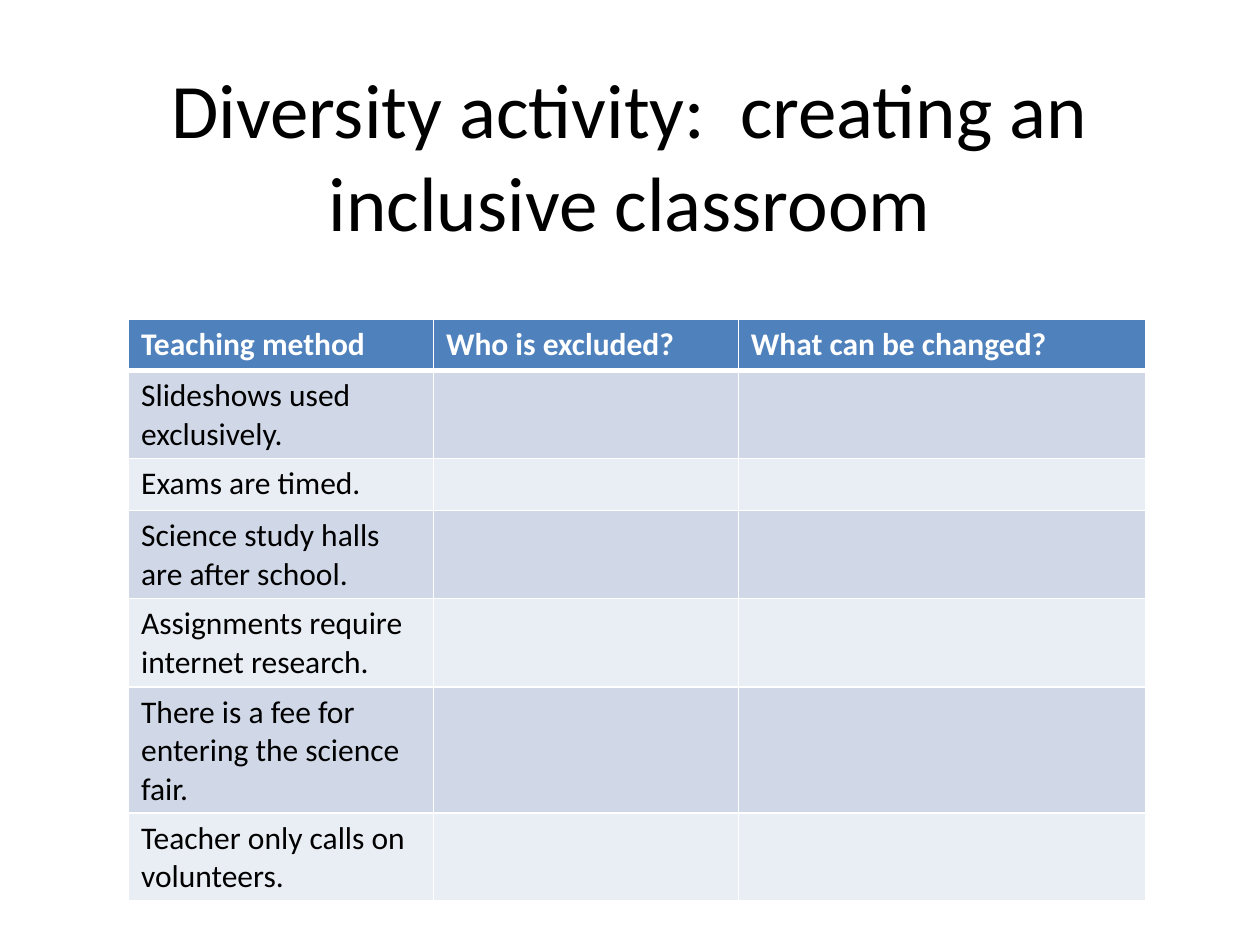
import pptx
import pptx.dml.color
import pptx.enum.text
import pptx.oxml.ns
import pptx.util
from lxml import etree
from pptx.util import Inches

TITLE = "Diversity activity:  creating an inclusive classroom"
HEADINGS = ["Teaching method", "Who is excluded?", "What can be changed?"]
METHODS = [
    "Slideshows used exclusively.",
    "Exams are timed.",
    "Science study halls are after school.",
    "Assignments require internet research.",
    "There is a fee for entering the science fair.",
    "Teacher only calls on volunteers.",
]
COLORS = {
    "text": "000000",
    "white": "FFFFFF",
    "header": "4F81BD",
    "odd": "D0D8E8",
    "even": "E9EDF4",
}
FONT = "Calibri"
COLUMN_WIDTHS = [2.42, 2.42, 3.23]
ROW_HEIGHT = 0.41


def rgb(name):
    return pptx.dml.color.RGBColor.from_string(COLORS[name])


def style_text(para, size, color, bold=False):
    for span in para.runs:
        span.font.name = FONT
        span.font.size = pptx.util.Pt(size)
        span.font.bold = bold
        span.font.color.rgb = rgb(color)


def add_borders(cell, widths):
    """Draw white cell borders; widths are points keyed by side."""
    properties = cell._tc.get_or_add_tcPr()
    for side, width in widths.items():
        line = etree.SubElement(properties, pptx.oxml.ns.qn(f"a:ln{side}"),
                                w=str(pptx.util.Pt(width)))
        fill = etree.SubElement(line, pptx.oxml.ns.qn("a:solidFill"))
        etree.SubElement(fill, pptx.oxml.ns.qn("a:srgbClr"), val=COLORS["white"])


def add_title(page):
    box = page.shapes.add_textbox(Inches(0.75), Inches(0.42), Inches(8.5), Inches(1.61))
    frame = box.text_frame
    frame.word_wrap = True
    frame.vertical_anchor = pptx.enum.text.MSO_ANCHOR.MIDDLE
    frame.text = TITLE
    para = frame.paragraphs[0]
    para.alignment = pptx.enum.text.PP_ALIGN.CENTER
    style_text(para, 44, "text")


def add_activity_table(page):
    rows = [HEADINGS] + [[method, "", ""] for method in METHODS]
    table = page.shapes.add_table(
        len(rows), len(HEADINGS), Inches(1.02), Inches(2.53),
        Inches(sum(COLUMN_WIDTHS)), Inches(ROW_HEIGHT * len(rows))).table
    for column, width in zip(table.columns, COLUMN_WIDTHS):
        column.width = Inches(width)

    for r, texts in enumerate(rows):
        table.rows[r].height = Inches(ROW_HEIGHT)
        is_header = r == 0
        fill = "header" if is_header else ("odd" if r % 2 else "even")
        for c, text in enumerate(texts):
            cell = table.cell(r, c)
            # The rule under the header row is heavier
            add_borders(cell, {"L": 1, "R": 1, "T": 3 if r == 1 else 1,
                               "B": 3 if is_header else 1})
            cell.fill.solid()
            cell.fill.fore_color.rgb = rgb(fill)
            if text:
                cell.text_frame.text = text
                style_text(cell.text_frame.paragraphs[0], 18,
                           "white" if is_header else "text", is_header)


def main():
    deck = pptx.Presentation()
    deck.slide_width, deck.slide_height = Inches(10), Inches(7.5)
    page = deck.slides.add_slide(deck.slide_layouts[6])
    add_title(page)
    add_activity_table(page)
    deck.save("out.pptx")


if __name__ == "__main__":
    main()
